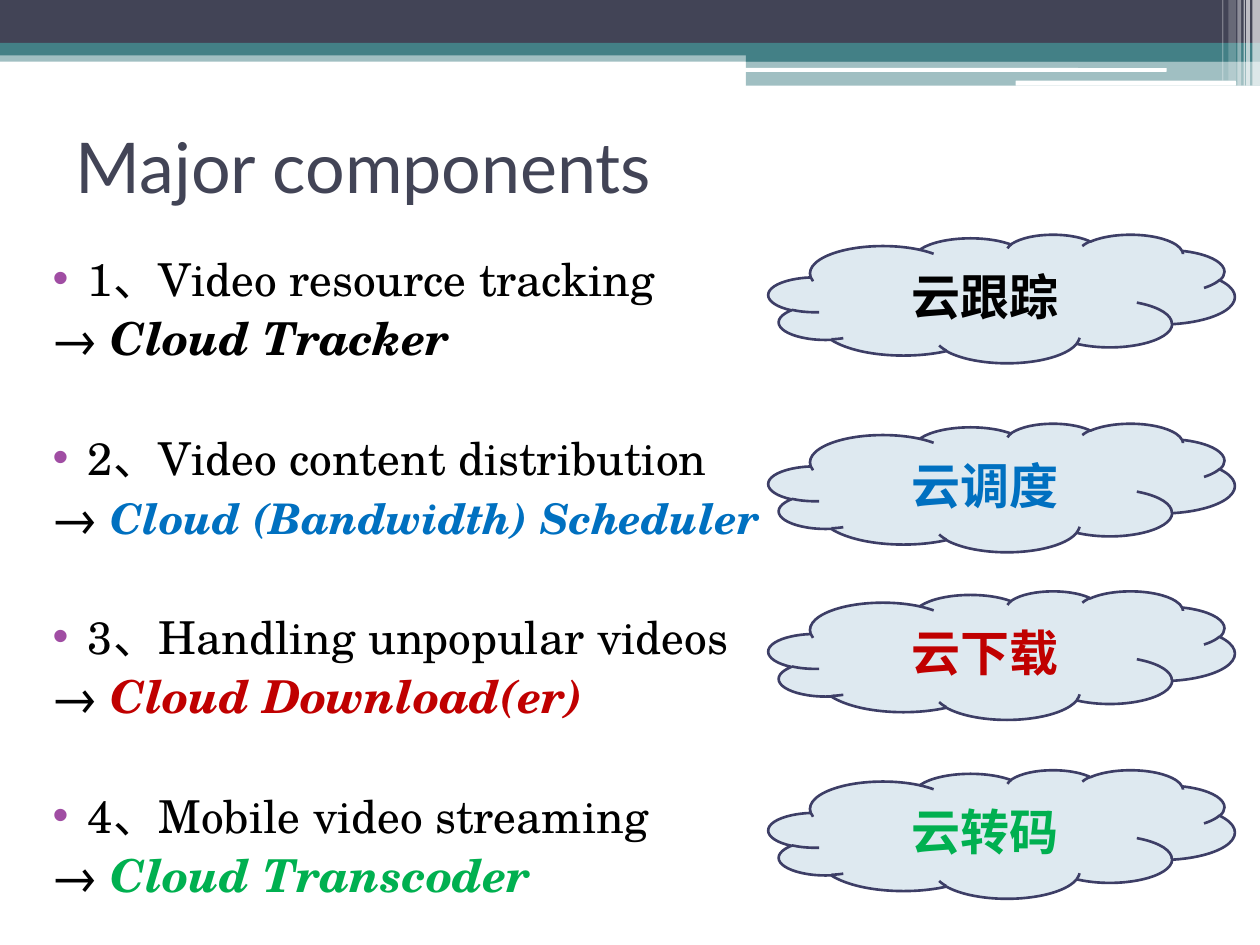
from dataclasses import dataclass

from lxml.etree import SubElement
from pptx import Presentation
from pptx.dml.color import RGBColor
from pptx.enum.shapes import MSO_SHAPE
from pptx.enum.text import MSO_ANCHOR, PP_ALIGN
from pptx.oxml.ns import qn
from pptx.util import Inches, Pt


@dataclass(frozen=True)
class Theme:
    title_font: str = "Lato"
    body_font: str = "TeX Gyre Schola"
    title_size: float = 40
    body_size: float = 25.9
    tight_size: float = 24.1
    cloud_size: float = 28
    line_gap: float = 3
    group_gap: float = 37.1
    navy: str = "424456"
    teal: str = "438086"
    white: str = "FFFFFF"
    black: str = "000000"
    blue: str = "0070C0"
    red: str = "C00000"
    green: str = "00B050"
    bullet: str = "A04DA3"
    cloud_fill: str = "DEE9F0"
    cloud_line: str = "3D3E66"


class SlideBuilder:
    def __init__(self, page, theme):
        self.page = page
        self.theme = theme

    def style(self, span, font, size, color, bold=False, italic=False):
        span.font.name = font
        span.font.size = Pt(size)
        span.font.color.rgb = RGBColor.from_string(color)
        span.font.bold = bold
        span.font.italic = italic

    def shape(self, kind, place, color):
        shape = self.page.shapes.add_shape(kind, *map(Inches, place))
        shape.shadow.inherit = False
        shape.fill.solid()
        shape.fill.fore_color.rgb = RGBColor.from_string(color)
        shape.line.fill.background()
        return shape

    def bar(self, place, color, opacity=100, kind=MSO_SHAPE.RECTANGLE):
        bar = self.shape(kind, place, color)
        if opacity < 100:
            fill = bar._element.spPr.find(qn("a:solidFill"))
            SubElement(fill[0], qn("a:alpha"), val=str(opacity * 1000))

    def title(self, text, place):
        title = self.page.shapes.title
        title.left, title.top, title.width, title.height = map(Inches, place)
        title.text_frame.text = text
        title.text_frame.vertical_anchor = MSO_ANCHOR.MIDDLE
        para = title.text_frame.paragraphs[0]
        para.alignment = PP_ALIGN.LEFT
        theme = self.theme
        self.style(para.runs[0], theme.title_font, theme.title_size, theme.navy)

    def indent(self, para, margin, first_line):
        properties = para._p.get_or_add_pPr()
        properties.set("marL", str(Inches(margin)))
        properties.set("indent", str(Inches(first_line)))
        return properties

    def bullet(self, para):
        properties = self.indent(para, 0.4, -0.28)
        color = SubElement(properties, qn("a:buClr"))
        SubElement(color, qn("a:srgbClr"), val=self.theme.bullet)
        SubElement(properties, qn("a:buFont"), typeface="Arial")
        SubElement(properties, qn("a:buChar"), char="•")

    def component_list(self, components, place):
        theme = self.theme
        box = self.page.shapes.add_textbox(*map(Inches, place))
        frame = box.text_frame
        frame.word_wrap = True
        for number, (task, name, _, color, size, _) in enumerate(components, 1):
            para = frame.paragraphs[0] if number == 1 else frame.add_paragraph()
            para.text = f"{number}、{task}"
            para.space_before = Pt(theme.line_gap if number == 1 else theme.group_gap)
            self.bullet(para)
            self.style(para.runs[0], theme.body_font, theme.body_size, theme.black)

            answer = frame.add_paragraph()
            answer.space_before = Pt(theme.line_gap)
            self.indent(answer, 0.12, 0)
            arrow, label = answer.add_run(), answer.add_run()
            arrow.text, label.text = "→ ", name
            self.style(arrow, theme.body_font, theme.body_size, theme.black)
            self.style(label, theme.body_font, size, color, bold=True, italic=True)

    def cloud(self, text, color, top):
        theme = self.theme
        cloud = self.shape(MSO_SHAPE.CLOUD, (6.1, top, 3.7, 1.02), theme.cloud_fill)
        cloud.line.color.rgb = RGBColor.from_string(theme.cloud_line)
        cloud.line.width = Pt(1.5)
        cloud.text_frame.text = text
        cloud.text_frame.vertical_anchor = MSO_ANCHOR.MIDDLE
        para = cloud.text_frame.paragraphs[0]
        para.alignment = PP_ALIGN.CENTER
        self.style(para.runs[0], theme.body_font, theme.cloud_size, color, bold=True)


def main():
    theme = Theme()
    deck = Presentation()
    deck.slide_width, deck.slide_height = Inches(10), Inches(7.5)
    builder = SlideBuilder(deck.slides.add_slide(deck.slide_layouts[5]), theme)

    for place, color, opacity in (
        ((0, 0.4, 10, 0.09), theme.teal, 50),
        ((0, 0, 10, 0.34), theme.navy, 100),
        ((0, 0.34, 10, 0.1), theme.teal, 100),
        ((5.92, 0.39, 4.08, 0.1), theme.teal, 100),
        ((5.92, 0.48, 4.08, 0.2), theme.teal, 50),
    ):
        builder.bar(place, color, opacity)
    for place in ((5.91, 0.54, 3.35, 0.03), (8.06, 0.64, 1.75, 0.04)):
        builder.bar(place, theme.white, kind=MSO_SHAPE.ROUNDED_RECTANGLE)
    for left, width, height, opacity in (
        (9.94, 0.06, 0.68, 65),
        (9.89, 0.03, 0.68, 65),
        (9.87, 0.01, 0.68, 60),
        (9.82, 0.03, 0.68, 40),
        (9.75, 0.06, 0.64, 20),
        (9.7, 0.01, 0.64, 30),
    ):
        builder.bar((left, 0, width, height), theme.white, opacity)

    regular, tight = theme.body_size, theme.tight_size
    components = (
        ("Video resource tracking", "Cloud Tracker", "云跟踪", theme.black, regular, 1.86),
        ("Video content distribution", "Cloud (Bandwidth) Scheduler", "云调度", theme.blue, tight, 3.36),
        ("Handling unpopular videos", "Cloud Download(er)", "云下载", theme.red, regular, 4.69),
        ("Mobile video streaming", "Cloud Transcoder", "云转码", theme.green, regular, 6.11),
    )
    builder.title("Major components", (0.5, 0.76, 9, 1.1))
    builder.component_list(components, (0.2, 1.94, 6.06, 5.25))
    for _, _, text, color, _, top in components:
        builder.cloud(text, color, top)

    deck.save("out.pptx")


if __name__ == "__main__":
    main()
